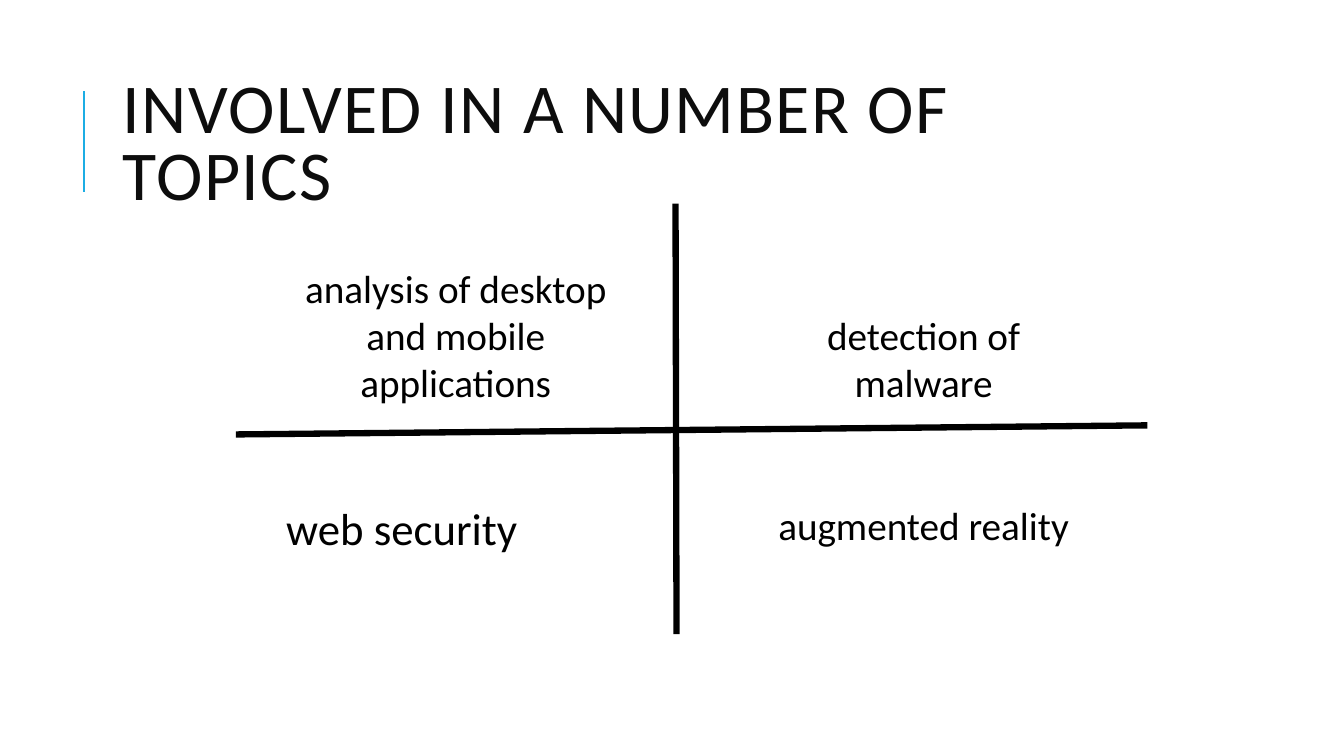
import pptx
import pptx.util
import pptx.dml.color
import pptx.enum.shapes
import pptx.enum.text
from pptx.util import Inches

ALIGN = pptx.enum.text.PP_ALIGN
ANCHOR = pptx.enum.text.MSO_ANCHOR

# Content
HEADING = "INVOLVED IN A NUMBER OF TOPICS"
# (topic, column, top, height, size name, alignment)
TOPICS = [
    ("analysis of desktop and mobile applications", 0, 2.57, 1.51, "topic", ALIGN.CENTER),
    ("detection of malware", 1, 3.04, 1.04, "topic", ALIGN.CENTER),
    ("web security", 0, 4.92, 0.64, "large topic", ALIGN.LEFT),
    ("augmented reality", 1, 4.92, 0.57, "topic", ALIGN.CENTER),
]
# (start, end, colour name, width in points)
RULES = [
    ((0.83, 1.9), (0.83, 0.9), "accent", 1.5),
    ((6.7, 2.02), (6.71, 6.29), "ink", 4.5),
    ((11.38, 4.22), (2.34, 4.31), "ink", 4.5),
]

THEME = {
    "font": "Calibri",
    "colours": {"accent": "1CADE4", "heading": "0D0D0D", "ink": "000000"},
    "sizes": {"heading": 50, "topic": 28, "large topic": 32},
}
COLUMN_LEFTS = (2.74, 7.38)
COLUMN_WIDTH = 3.56


def colour(name):
    return pptx.dml.color.RGBColor.from_string(THEME["colours"][name])


def add_text(slide, text, box, size, ink, align, anchor):
    frame = slide.shapes.add_textbox(*map(Inches, box)).text_frame
    frame.word_wrap = True
    frame.vertical_anchor = anchor
    paragraph = frame.paragraphs[0]
    paragraph.alignment = align
    run = paragraph.add_run()
    run.text = text
    font_format = {"name": THEME["font"], "size": pptx.util.Pt(THEME["sizes"][size])}
    for attribute, value in font_format.items():
        setattr(run.font, attribute, value)
    run.font.color.rgb = colour(ink)
    return paragraph


def add_rule(slide, start, end, ink, width):
    rule = slide.shapes.add_connector(
        pptx.enum.shapes.MSO_CONNECTOR.STRAIGHT, *map(Inches, start + end))
    rule.line.color.rgb = colour(ink)
    rule.line.width = pptx.util.Pt(width)
    properties = rule.line._get_or_add_ln().getparent()
    properties.append(pptx.oxml.xmlchemy.OxmlElement("a:effectLst"))


def main():
    deck = pptx.Presentation()
    deck.slide_width, deck.slide_height = Inches(13.33), Inches(7.5)
    slide = deck.slides.add_slide(deck.slide_layouts[6])

    # Heading, tightly set with letter spacing
    heading = add_text(slide, HEADING, (1.12, 0.64, 10.63, 1.64),
                       "heading", "heading", ALIGN.LEFT, ANCHOR.MIDDLE)
    heading.line_spacing = 0.8
    heading.runs[0].font._element.set("spc", "100")

    # Heading accent and quadrant axes
    for rule in RULES:
        add_rule(slide, *rule)

    # Topics in the quadrants
    for topic, column, top, height, size, align in TOPICS:
        box = (COLUMN_LEFTS[column], top, COLUMN_WIDTH, height)
        add_text(slide, topic, box, size, "ink", align, ANCHOR.TOP)

    deck.save("out.pptx")


if __name__ == "__main__":
    main()
